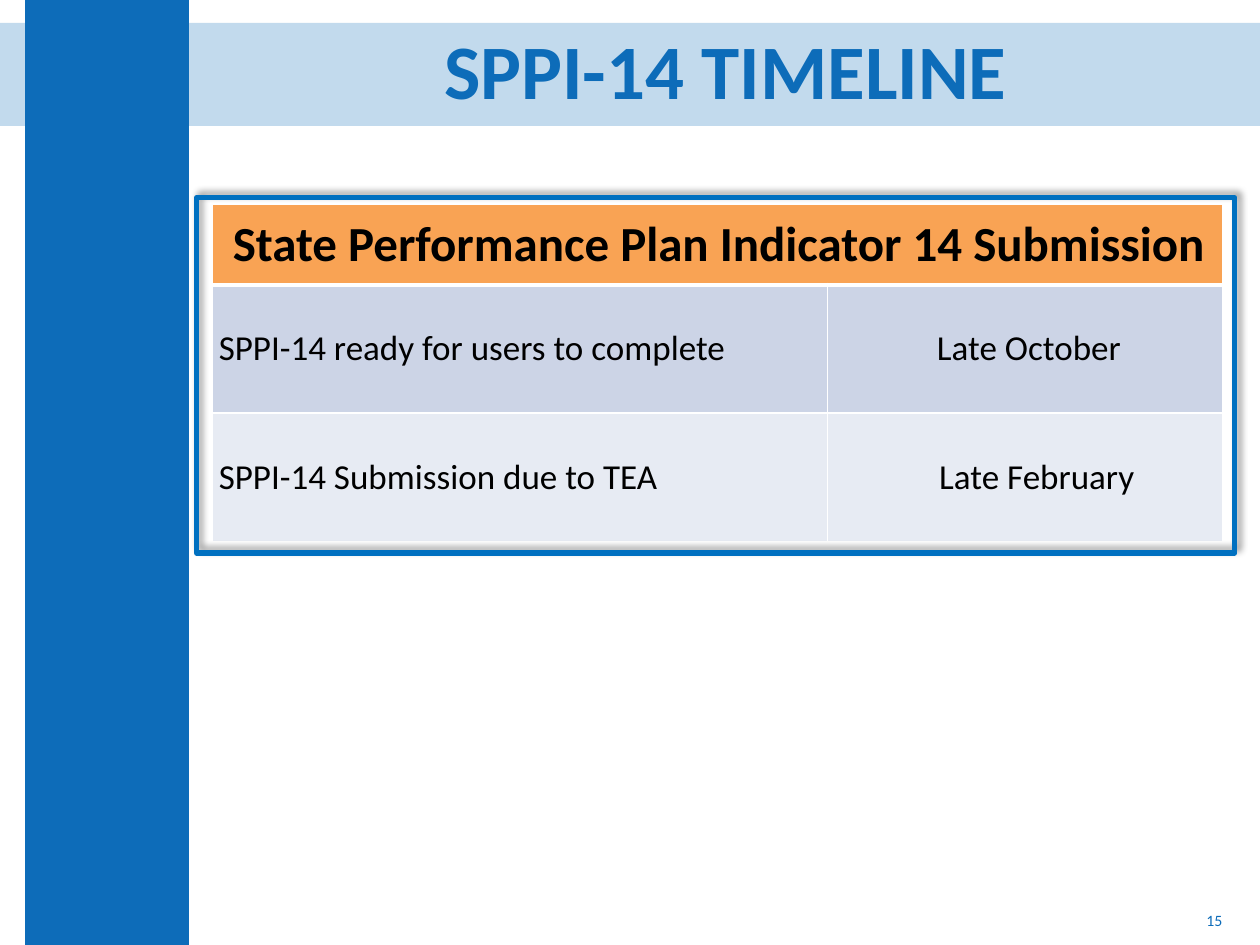
from dataclasses import dataclass

from lxml import etree
from pptx import Presentation
from pptx.dml.color import RGBColor
from pptx.enum.shapes import MSO_SHAPE
from pptx.enum.text import MSO_ANCHOR, PP_ALIGN
from pptx.oxml import parse_xml
from pptx.oxml.ns import nsdecls, qn
from pptx.util import Pt

RECTANGLE = MSO_SHAPE.RECTANGLE
MIDDLE = MSO_ANCHOR.MIDDLE
LEFT, CENTER, RIGHT = PP_ALIGN.LEFT, PP_ALIGN.CENTER, PP_ALIGN.RIGHT

BLUE = RGBColor(0x0D, 0x6C, 0xB9)
FRAME_BLUE = RGBColor(0x00, 0x70, 0xC0)
ORANGE = RGBColor(0xF9, 0xA3, 0x54)
ROW_DARK = RGBColor(0xCC, 0xD4, 0xE6)
ROW_LIGHT = RGBColor(0xE7, 0xEB, 0xF3)
BLACK = RGBColor(0x00, 0x00, 0x00)
WHITE = RGBColor(0xFF, 0xFF, 0xFF)
FONT = "Calibri"


@dataclass(frozen=True)
class Box:
    left: float
    top: float
    width: float
    height: float

    def lengths(self) -> tuple:
        return Pt(self.left), Pt(self.top), Pt(self.width), Pt(self.height)


@dataclass(frozen=True)
class Entry:
    text: str
    fill: RGBColor
    align: PP_ALIGN = LEFT
    indent: float = 4
    size: float = 20
    bold: bool = False
    top_line: float = 1
    bottom_line: float = 1


def style_text(frame, text: str, size: float, color: RGBColor,
               align: PP_ALIGN, bold: bool = False):
    paragraph = frame.paragraphs[0]
    paragraph.text = text
    paragraph.alignment = align
    font = paragraph.font
    font.name, font.size, font.bold = FONT, Pt(size), bold
    font.color.rgb = color
    return paragraph


def draw_block(slide, box: Box, color: RGBColor):
    block = slide.shapes.add_shape(RECTANGLE, *box.lengths())
    block.shadow.inherit = False
    block.fill.solid()
    block.fill.fore_color.rgb = color
    block.line.fill.background()
    return block


def draw_frame(slide, box: Box) -> None:
    frame = slide.shapes.add_shape(RECTANGLE, *box.lengths())
    frame.shadow.inherit = False
    frame.fill.background()
    frame.line.color.rgb = FRAME_BLUE
    frame.line.width = Pt(3)
    effects = frame._element.spPr.find(qn("a:effectLst"))
    effects.append(parse_xml(
        f'<a:outerShdw {nsdecls("a")} blurRad="{Pt(4)}" dist="{Pt(3)}" '
        'dir="18900000" algn="bl" rotWithShape="0">'
        '<a:srgbClr val="000000"><a:alpha val="40000"/></a:srgbClr>'
        '</a:outerShdw>'))


def draw_cell(cell, entry: Entry) -> None:
    properties = cell._tc.get_or_add_tcPr()
    edges = {"L": 1, "R": 1, "T": entry.top_line, "B": entry.bottom_line}
    for side, width in edges.items():
        properties.append(parse_xml(
            f'<a:ln{side} {nsdecls("a")} w="{Pt(width)}"><a:solidFill>'
            f'<a:srgbClr val="{WHITE}"/></a:solidFill></a:ln{side}>'))
    cell.fill.solid()
    cell.fill.fore_color.rgb = entry.fill
    cell.margin_left = Pt(entry.indent)
    cell.margin_right = cell.margin_top = cell.margin_bottom = 0
    cell.vertical_anchor = MIDDLE
    style_text(cell.text_frame, entry.text, entry.size, BLACK, entry.align, entry.bold)


def draw_schedule(slide, box: Box, columns: list[float], heights: list[float],
                  rows: list[list[Entry]]) -> None:
    table = slide.shapes.add_table(len(rows), len(columns), *box.lengths()).table
    for column, width in zip(table.columns, columns):
        column.width = Pt(width)
    for row, height in zip(table.rows, heights):
        row.height = Pt(height)
    table.cell(0, 0).merge(table.cell(0, len(columns) - 1))
    for r, entries in enumerate(rows):
        for c, entry in enumerate(entries):
            draw_cell(table.cell(r, c), entry)


def main() -> None:
    deck = Presentation()
    deck.slide_width, deck.slide_height = Pt(720), Pt(540)
    slide = deck.slides.add_slide(deck.slide_layouts[5])

    header = Box(0, 13, 720, 59)
    band = draw_block(slide, header, BLUE)
    band_color = band._element.spPr.find(qn("a:solidFill"))[0]
    etree.SubElement(band_color, qn("a:alpha"), val="25000")
    draw_block(slide, Box(14.4, 0, 93.6, 540), BLUE)

    number = slide.shapes.add_textbox(*Box(543.6, 511.2, 162, 28.8).lengths()).text_frame
    number.word_wrap = True
    number.vertical_anchor = MIDDLE
    style_text(number, "15", 9, BLUE, RIGHT)

    title = slide.shapes.title
    slide.shapes._spTree.append(title._element)
    title.left, title.top, title.width, title.height = Box(
        130.3, header.top, 568.8, header.height).lengths()
    title.text_frame.vertical_anchor = MIDDLE
    heading = style_text(title.text_frame, "SPPI-14 TIMELINE", 44, BLUE, CENTER, True)
    heading.line_spacing = 0.9

    columns = [352, 226]
    heights = [46, 73.3, 73.3]
    rows = [
        [Entry("State Performance Plan Indicator 14 Submission", ORANGE,
               indent=12, size=28, bold=True, bottom_line=3)],
        [Entry("SPPI-14 ready for users to complete", ROW_DARK, top_line=3),
         Entry("Late October", ROW_DARK, CENTER, top_line=3)],
        [Entry("SPPI-14 Submission due to TEA", ROW_LIGHT),
         Entry("Late February", ROW_LIGHT, CENTER, indent=13)],
    ]
    draw_schedule(slide, Box(121, 116.8, sum(columns), sum(heights)),
                  columns, heights, rows)
    draw_frame(slide, Box(112.3, 113, 593.3, 203))

    deck.save("out.pptx")


if __name__ == "__main__":
    main()
